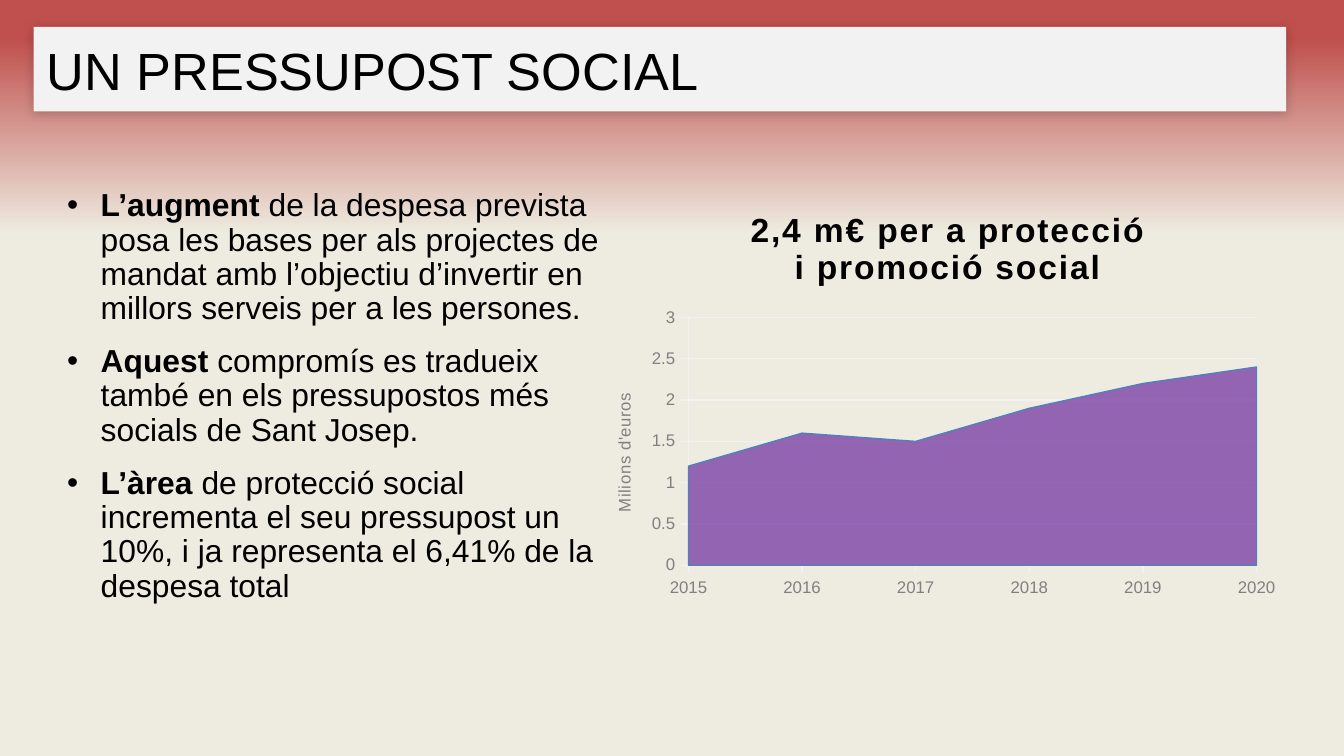
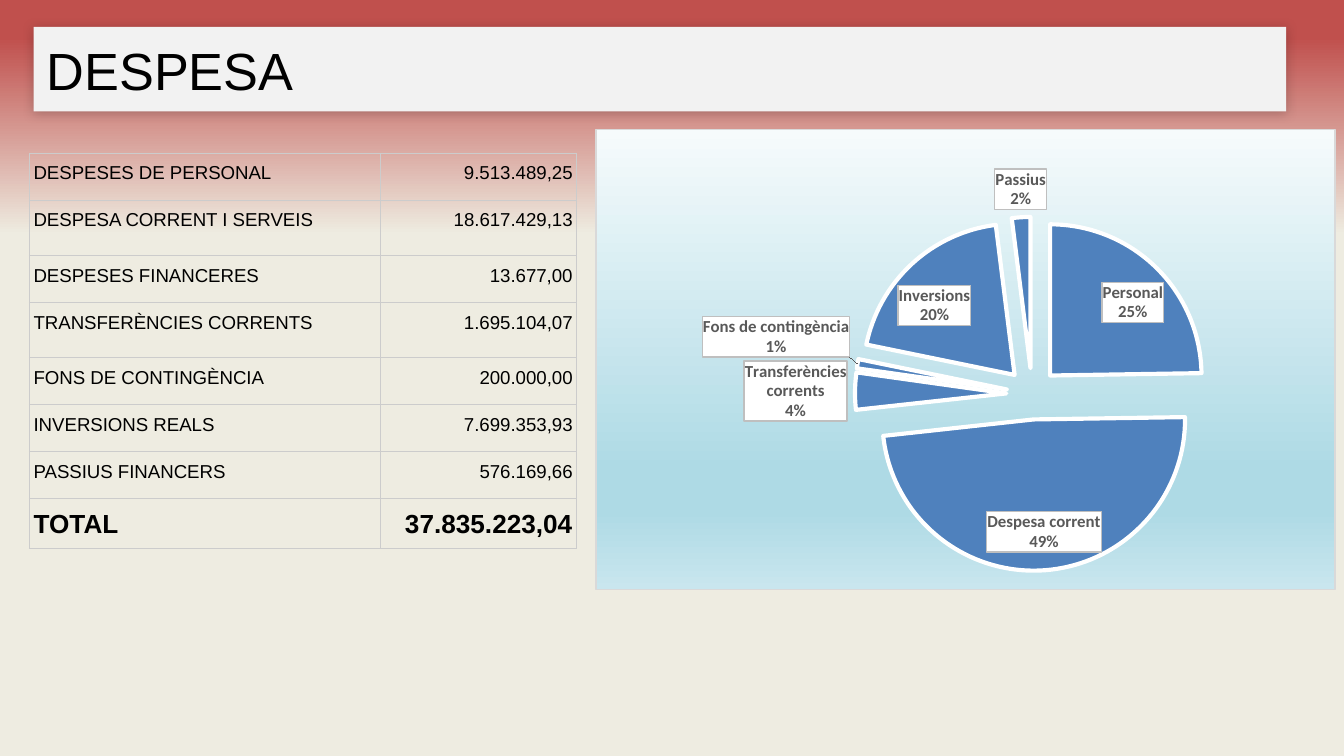
from pptx import Presentation
from pptx.chart.data import CategoryChartData
from pptx.dml.color import RGBColor
from pptx.enum.chart import XL_CHART_TYPE, XL_LABEL_POSITION, XL_TICK_MARK
from pptx.enum.shapes import MSO_SHAPE
from pptx.enum.text import MSO_ANCHOR, PP_ALIGN
from pptx.oxml import parse_xml
from pptx.oxml.ns import nsdecls
from pptx.util import Inches, Pt

COLORS = {
    "red": "C0504D", "cream": "EEECE1", "band": "F2F2F2", "black": "000000",
    "grey": "808080", "label": "595959", "label_line": "BFBFBF", "white": "FFFFFF",
    "cell_line": "CCCCCC", "chart_line": "D9D9D9", "blue": "4F81BD", "purple": "7030A0",
    "sky_top": "F6FBFC", "sky": "AEDAE5", "sky_bottom": "C9E6EE",
}


def write(paragraph, text, size=10, color="black", bold=False, font="Arial", spacing=0):
    span = paragraph.add_run()
    span.text = text
    span.font.size = Pt(size)
    span.font.bold = bold
    span.font.name = font
    span.font.color.rgb = RGBColor.from_string(COLORS[color])
    if spacing:
        span._r.get_or_add_rPr().set("spc", str(spacing))


def element(tag, content="", attributes=""):
    return parse_xml(f'<{tag} {nsdecls("a", "c")} {attributes}>{content}</{tag}>')


deck = Presentation()
deck.slide_width = Inches(10)
deck.slide_height = Inches(10 * 9 / 16)

background = deck.slide_master.background.fill
background.gradient()
background.gradient_angle = 270
for stop, (position, color) in zip(background.gradient_stops, [(0.05, "red"), (0.31, "cream")]):
    stop.position = position
    stop.color.rgb = RGBColor.from_string(COLORS[color])

pages = []
for title in ["UN PRESSUPOST SOCIAL", "DESPESA"]:
    page = deck.slides.add_slide(deck.slide_layouts[6])
    band = page.shapes.add_shape(MSO_SHAPE.RECTANGLE, Inches(0.25), Inches(0.2), Inches(9.32), Inches(0.63))
    band.fill.solid()
    band.fill.fore_color.rgb = RGBColor.from_string(COLORS["band"])
    band.line.fill.background()
    band.shadow.inherit = False
    band._element.spPr.find("{*}effectLst").append(element(
        "a:outerShdw",
        f'<a:srgbClr val="{COLORS["black"]}"><a:alpha val="20000"/></a:srgbClr>',
        f'blurRad="{Pt(6)}" dist="{Pt(1)}" dir="8100000" algn="tr" rotWithShape="0"'))
    frame = band.text_frame
    frame.word_wrap = True
    frame.vertical_anchor = MSO_ANCHOR.MIDDLE
    frame.margin_left = frame.margin_right = frame.margin_top = frame.margin_bottom = Inches(0.1)
    frame.paragraphs[0].alignment = PP_ALIGN.LEFT
    write(frame.paragraphs[0], title, size=28)
    pages.append(page)
social_page, spending_page = pages

box = social_page.shapes.add_textbox(Inches(0.5), Inches(1.41), Inches(4.03), Inches(3.17))
frame = box.text_frame
frame.word_wrap = True
frame.margin_left = frame.margin_right = frame.margin_top = frame.margin_bottom = 0
points = [
    ("L’augment ", "de la despesa prevista posa les bases per als projectes de mandat "
     "amb l’objectiu d’invertir en millors serveis per a les persones."),
    ("Aquest", " compromís es tradueix també en els pressupostos més socials de Sant Josep."),
    ("L’àrea", " de protecció social incrementa el seu pressupost un 10%, "
     "i ja representa el 6,41% de la despesa total"),
]
for index, (lead, rest) in enumerate(points):
    paragraph = frame.add_paragraph() if index else frame.paragraphs[0]
    paragraph.line_spacing = 0.9
    if index:
        paragraph.space_before = Pt(10)
    properties = paragraph._p.get_or_add_pPr()
    properties.set("marL", str(Inches(0.25)))
    properties.set("indent", str(Inches(-0.25)))
    properties.append(element("a:buFont", attributes='typeface="Arial"'))
    properties.append(element("a:buChar", attributes='char="•"'))
    write(paragraph, lead, size=17, bold=True)
    write(paragraph, rest, size=17)

social_data = CategoryChartData()
social_data.categories = ["2015", "2016", "2017", "2018", "2019", "2020"]
social_data.add_series("Series 1", [1.2, 1.6, 1.5, 1.9, 2.2, 2.4])
social_chart = social_page.shapes.add_chart(
    XL_CHART_TYPE.AREA_STACKED, Inches(4.54), Inches(1.41), Inches(5.02), Inches(3.04), social_data).chart
social_chart.font.size = Pt(10)
social_chart.font.name = "Arial"
social_chart.has_legend = False
social_chart.plots[0].vary_by_categories = False

frame = social_chart.chart_title.text_frame
write(frame.paragraphs[0], "2,4 m€ per a protecció", size=18, bold=True, spacing=100)
write(frame.add_paragraph(), "i promoció social", size=18, bold=True, spacing=100)
social_chart.chart_title.include_in_layout = False

value_axis = social_chart.value_axis
value_axis.minimum_scale, value_axis.maximum_scale, value_axis.major_unit = 0, 3, 0.5
value_axis.tick_labels.number_format = "General"
value_axis.tick_labels.number_format_is_linked = False
write(value_axis.axis_title.text_frame.paragraphs[0], "Milions d'euros", size=9, color="grey", spacing=30)
value_axis.axis_title.text_frame._txBody.bodyPr.set("rot", "-5400000")
value_axis._element.find("{*}crossBetween").set("val", "midCat")
for axis in [social_chart.category_axis, value_axis]:
    axis.major_tick_mark = XL_TICK_MARK.OUTSIDE
    axis.tick_labels.font.size = Pt(9)
    axis.tick_labels.font.name = "Arial"
    axis.tick_labels.font.color.rgb = RGBColor.from_string(COLORS["grey"])
for line in [social_chart.category_axis.format.line, value_axis.format.line,
             value_axis.major_gridlines.format.line]:
    line.color.rgb = RGBColor.from_string(COLORS["band"])
    line.width = Pt(0.75)

area = social_chart.plots[0].series[0]
area.format.fill.solid()
area.format.fill.fore_color.rgb = RGBColor.from_string(COLORS["purple"])
area._element.spPr.find(".//{*}srgbClr").append(element("a:alpha", attributes='val="72000"'))
area.format.line.color.rgb = RGBColor.from_string(COLORS["blue"])
area.format.line.width = Pt(0.75)

rows = [
    ("DESPESES DE PERSONAL", "9.513.489,25"),
    ("DESPESA CORRENT I SERVEIS", "18.617.429,13"),
    ("DESPESES FINANCERES", "13.677,00"),
    ("TRANSFERÈNCIES CORRENTS", "1.695.104,07"),
    ("FONS DE CONTINGÈNCIA", "200.000,00"),
    ("INVERSIONS REALS", "7.699.353,93"),
    ("PASSIUS FINANCERS", "576.169,66"),
    ("TOTAL", "37.835.223,04"),
]
table = spending_page.shapes.add_table(
    len(rows), 2, Inches(0.22), Inches(1.14), Inches(4.07), Inches(2.92)).table
table.first_row = table.horz_banding = False
table.columns[0].width = Inches(2.61)
table.columns[1].width = Inches(1.46)
for row_index, row in enumerate(rows):
    table.rows[row_index].height = Inches(0.41 if row_index in (1, 3) else 0.35)
    total = row[0] == "TOTAL"
    for column_index, text in enumerate(row):
        cell = table.cell(row_index, column_index)
        cell.margin_left = cell.margin_right = Inches(0.03)
        cell.margin_top = cell.margin_bottom = Inches(0.05)
        paragraph = cell.text_frame.paragraphs[0]
        paragraph.line_spacing = 1.15
        paragraph.alignment = PP_ALIGN.RIGHT if column_index else PP_ALIGN.LEFT
        write(paragraph, text, size=14 if total else 10, bold=total)
        for side in ["lnL", "lnR", "lnT", "lnB"]:
            cell._tc.get_or_add_tcPr().append(element(
                f"a:{side}", f'<a:solidFill><a:srgbClr val="{COLORS["cell_line"]}"/></a:solidFill>',
                f'w="{Pt(0.75)}"'))
        cell.fill.background()

spending_data = CategoryChartData()
spending_data.categories = [
    "Personal", "Despesa corrent", "Despesa financera", "Transferències corrents",
    "Fons de contingència", "Inversions", "Transferències capital", "Passius"]
spending_data.add_series("Series 1", [25, 49, 0, 4, 1, 20, 0, 2])
spending_chart = spending_page.shapes.add_chart(
    XL_CHART_TYPE.PIE, Inches(4.43), Inches(0.96), Inches(5.51), Inches(3.43), spending_data).chart
spending_chart.has_title = False
spending_chart.has_legend = False
spending_chart.font.size = Pt(9)
spending_chart.font.name = "Calibri"
spending_chart.plots[0].vary_by_categories = False

pie = spending_chart.plots[0].series[0]
pie.format.fill.solid()
pie.format.fill.fore_color.rgb = RGBColor.from_string(COLORS["blue"])
pie.format.line.color.rgb = RGBColor.from_string(COLORS["white"])
pie.format.line.width = Pt(2.25)
pie._element.spPr.addnext(element("c:explosion", attributes='val="17"'))

labels = pie.data_labels
labels.show_value = False
labels.show_category_name = labels.show_percentage = True
labels.position = XL_LABEL_POSITION.BEST_FIT
labels.font.size = Pt(9)
labels.font.bold = True
labels.font.name = "Calibri"
labels.font.color.rgb = RGBColor.from_string(COLORS["label"])
labels._element.find("{*}txPr").addprevious(element(
    "c:spPr",
    f'<a:solidFill><a:srgbClr val="{COLORS["white"]}"/></a:solidFill><a:ln w="{Pt(0.75)}">'
    f'<a:solidFill><a:srgbClr val="{COLORS["label_line"]}"/></a:solidFill></a:ln>'))
labels._element.find("{*}showBubbleSize").addnext(
    element("c:separator", "\n"))

sky_stops = "".join(
    f'<a:gs pos="{position}000"><a:srgbClr val="{COLORS[color]}"/></a:gs>'
    for position, color in [(0, "sky_top"), (74, "sky"), (83, "sky"), (100, "sky_bottom")])
spending_chart._chartSpace.chart.addnext(element(
    "c:spPr",
    f'<a:gradFill><a:gsLst>{sky_stops}</a:gsLst><a:lin ang="5400000" scaled="0"/></a:gradFill>'
    f'<a:ln w="{Pt(0.75)}"><a:solidFill><a:srgbClr val="{COLORS["chart_line"]}"/></a:solidFill></a:ln>'))

layouts = [
    (social_chart, "{*}plotArea", (0.116, 0.315, 0.842, 0.61)),
    (spending_chart, "{*}plotArea", (0.35, 0.19, 0.48, 0.77)),
]
for chart, area_name, sizes in layouts:
    plot_area = chart._chartSpace.chart.find(area_name)
    for old_layout in plot_area.findall("{*}layout"):
        plot_area.remove(old_layout)
    values = "".join(f'<c:{name} val="{size}"/>' for name, size in zip("xywh", sizes))
    plot_area.insert(0, element(
        "c:layout",
        '<c:manualLayout><c:layoutTarget val="inner"/><c:xMode val="edge"/><c:yMode val="edge"/>'
        f'{values}</c:manualLayout>'))

deck.save("out.pptx")
